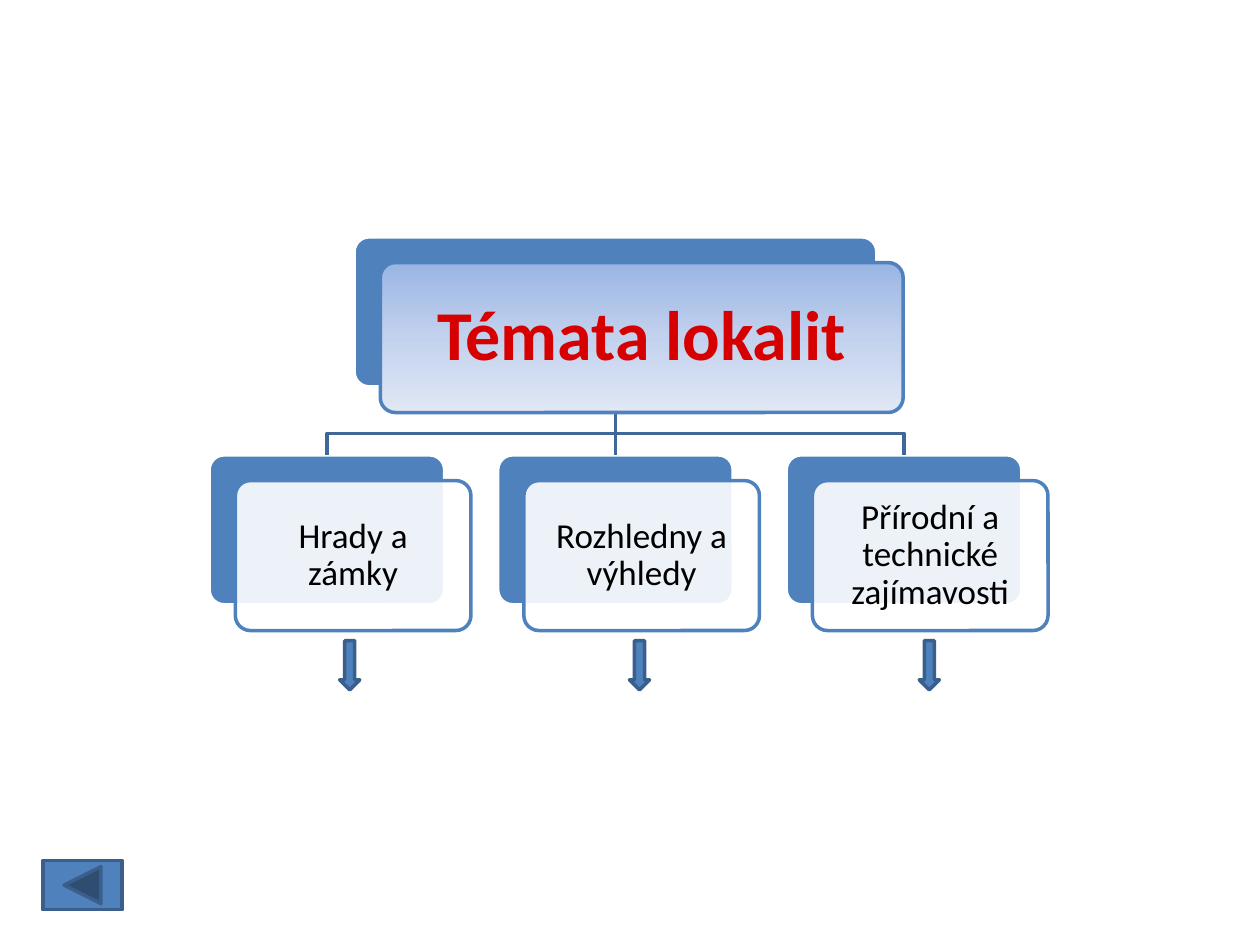
import copy
import pptx
import pptx.util
import pptx.dml.color
import pptx.enum.shapes
import pptx.enum.text
import pptx.oxml
import pptx.oxml.ns

KIND = pptx.enum.shapes.MSO_SHAPE
COLS, ROWS = 100, 75
BLUE, EDGE, LINK, WHITE = "4F81BD", "3A5F8C", "3F6797", "FFFFFF"
SHIFT = 2.08
TOPICS = ["Hrady a zámky", "Rozhledny a výhledy", "Přírodní a technické zajímavosti"]

deck = pptx.Presentation()
deck.slide_width = pptx.util.Inches(10)
deck.slide_height = pptx.util.Inches(7.5)
slide = deck.slides.add_slide(deck.slide_layouts[6])
shapes = slide.shapes


def col(n):
    """Turn grid columns into a length."""
    return int(deck.slide_width * n / COLS)


def row(n):
    """Turn grid rows into a length."""
    return int(deck.slide_height * n / ROWS)


def tint(code):
    """Turn a hex string into a colour."""
    return pptx.dml.color.RGBColor.from_string(code)


def dress(shape, edge, fill=None):
    """Give a shape its line and fill, without a shadow."""
    shape.shadow.inherit = False
    shape.line.color.rgb = tint(edge)
    shape.line.width = pptx.util.Pt(2)
    if fill:
        shape.fill.solid()
        shape.fill.fore_color.rgb = tint(fill)
    else:
        shape.fill.background()


def form(kind, box, edge, fill):
    """Place a preset shape in a grid box."""
    left, top, wide, high = box
    shape = shapes.add_shape(kind, col(left), row(top), col(wide), row(high))
    dress(shape, edge, fill)
    return shape


def card(box, edge, fill):
    """Place a rounded card."""
    shape = form(KIND.ROUNDED_RECTANGLE, box, edge, fill)
    shape.adjustments[0] = 0.1
    return shape


def label(shape, text, inset, style):
    """Write centred text in a card."""
    frame = shape.text_frame
    frame.word_wrap = True
    frame.vertical_anchor = pptx.enum.text.MSO_ANCHOR.MIDDLE
    for side in ("left", "top", "right", "bottom"):
        setattr(frame, "margin_" + side, pptx.util.Inches(inset))
    para = frame.paragraphs[0]
    para.alignment = pptx.enum.text.PP_ALIGN.CENTER
    para.line_spacing = 0.9
    run = para.add_run()
    run.text = text
    run.font.color.rgb = tint(style["color"])
    for key, value in style["font"].items():
        setattr(run.font, key, value)


def front(box, text, inset, style):
    """Place the front card, shifted from the back card's box."""
    left, top, wide, high = box
    shape = card((left + SHIFT, top + SHIFT - 0.04, wide, high), BLUE, WHITE)
    label(shape, text, inset, style)
    return shape


def shade(shape, codes):
    """Fill a shape with an even gradient from top to bottom."""
    shape.fill.gradient()
    shape.fill.gradient_angle = 270
    stops = shape._element.spPr.find(".//" + pptx.oxml.ns.qn("a:gsLst"))
    stops.insert(1, copy.deepcopy(stops[0]))
    for n, (stop, code) in enumerate(zip(shape.fill.gradient_stops, codes)):
        stop.color.rgb = tint(code)
        stop.position = n / (len(codes) - 1)


def veil(shape, share):
    """Set the opacity of a solid fill."""
    tone = shape._element.spPr.find(pptx.oxml.ns.qn("a:solidFill"))[0]
    alpha = pptx.oxml.parse_xml("<a:alpha %s val='%d'/>" % (pptx.oxml.ns.nsdecls("a"), share * 100000))
    tone.append(alpha)


def link(head, leaf):
    """Join the head card to a leaf card."""
    start = head.left + head.width // 2, head.top + head.height
    end = leaf.left + leaf.width // 2, leaf.top
    if abs(start[0] - end[0]) < col(0.2):
        line = shapes.add_connector(pptx.enum.shapes.MSO_CONNECTOR.STRAIGHT, *start, *end)
        line.begin_connect(head, 2)
        line.end_connect(leaf, 0)
        line.line.color.rgb = tint(LINK)
        line.line.width = pptx.util.Pt(2)
        line._element.spPr.append(pptx.oxml.parse_xml("<a:effectLst %s/>" % pptx.oxml.ns.nsdecls("a")))
        return
    bend = row(34.4)
    pen = shapes.build_freeform(*start)
    pen.add_line_segments([(start[0], bend), (end[0], bend), end], close=False)
    dress(pen.convert_to_shape(), LINK)


def tree(left, top, step):
    """Place the heading, its topics and the links between them."""
    crown = (left + 11.5, top, 41.5, 11.9)
    boxes = [(left + n * step, top + 17.3, 18.7, 11.9) for n in range(len(TOPICS))]
    head = card(crown, WHITE, BLUE)
    leaves = [card(box, WHITE, BLUE) for box in boxes]
    for leaf in leaves:
        link(head, leaf)
    bold = {"color": "D70000", "font": {"name": "Calibri", "size": pptx.util.Pt(40), "bold": True}}
    plain = {"color": "000000", "font": {"name": "Calibri", "size": pptx.util.Pt(20)}}
    shade(front(crown, "Témata lokalit", 0.17, bold), ["9AB5E4", "C2D1ED", "E1E8F5"])
    for box, text in zip(boxes, TOPICS):
        veil(front(box, text, 0.08, plain), 0.9)


def arrows(left, top, step):
    """Place one downward arrow under each topic."""
    for n in range(len(TOPICS)):
        form(KIND.RIGHT_ARROW, (left + n * step, top, 3.9, 1.6), EDGE, BLUE).rotation = 90


form(KIND.ACTION_BUTTON_BACK_OR_PREVIOUS, (3.4, 68.3, 6.3, 3.9), EDGE, BLUE)
tree(16.6, 18.8, 22.9)
arrows(25.8, 52, 23)
deck.save("out.pptx")
